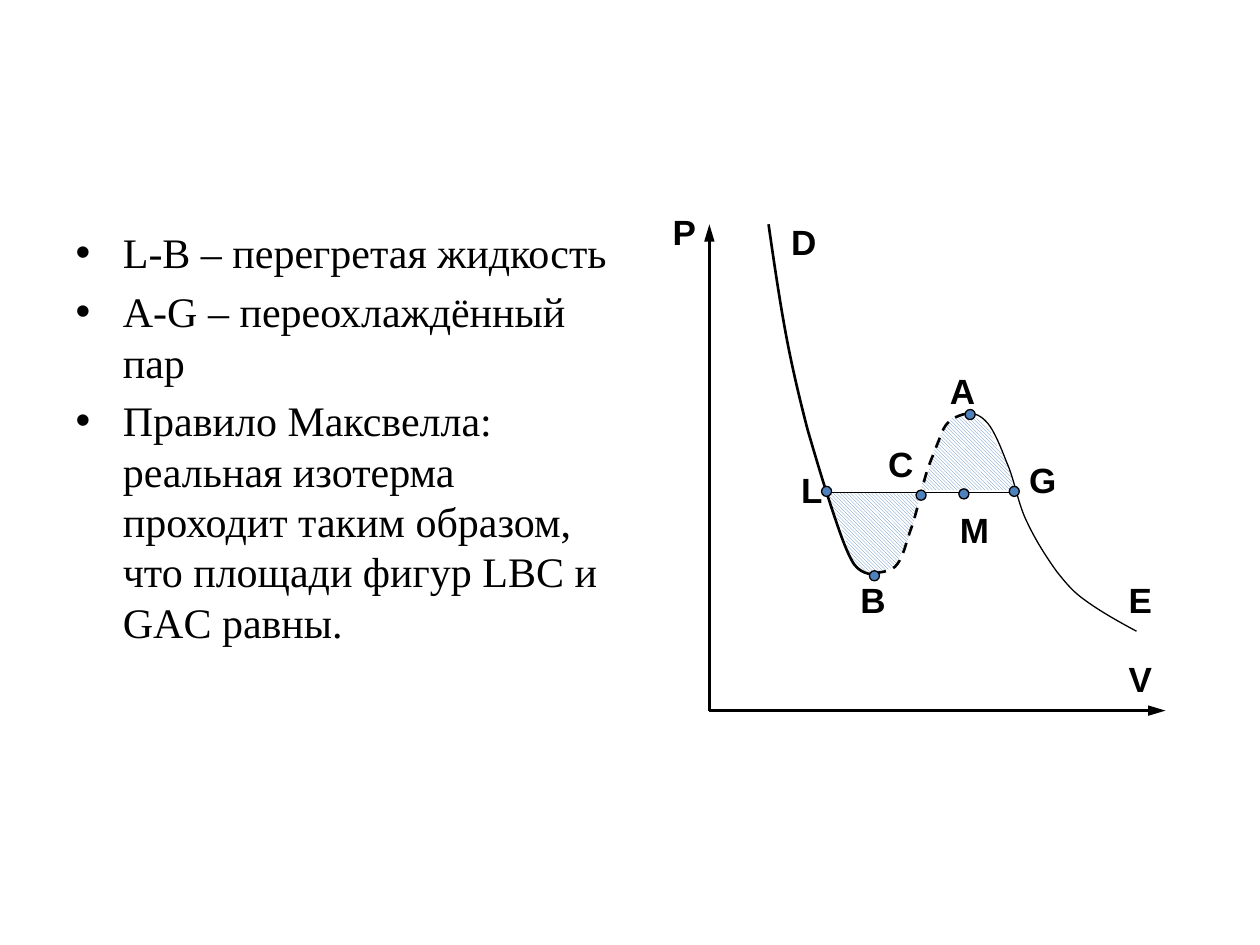
from dataclasses import dataclass

from lxml import etree
from pptx import Presentation, util as u
from pptx.dml.color import RGBColor
from pptx.enum import dml, shapes, text
from pptx.oxml import parse_xml
from pptx.oxml.ns import nsdecls, qn

Point = tuple[float, float]

# Grid: 100 columns by 75 rows of square cells
CELL = u.Inches(0.1)
COLORS = {"ink": "000000", "accent": "4F81BD", "paper": "FFFFFF"}
THICK, THIN = 1.5, 0.75
DOT = 0.8
LABEL_HEIGHT = 4.3
ISOBAR_ROW = 39.1


@dataclass
class Label:
    letter: str
    col: float
    row: float
    width: float = 4


@dataclass
class Branch:
    """Part of the isotherm: a chain of cubic Bezier knots and handles."""
    knots: list[Point]
    weight: float
    dashed: bool = False


NOTES = [
    "L-B – перегретая жидкость",
    "A-G – переохлаждённый пар",
    "Правило Максвелла: реальная изотерма проходит таким образом, "
    "что площади фигур LBC и GAC равны.",
]

LOBE_GAC = [
    (73.1, 38.9), (73.4, 37.1), (73, 39), (73.5, 37.7),
    (73.8, 37.2), (74, 36.4), (74.1, 35.9), (74.2, 35.6), (74.2, 35.3), (74.3, 35.1),
    (74.5, 34.7), (74.7, 34.5), (74.9, 34.1), (74.9, 34.1), (75.5, 33.2), (75.5, 33.2),
    (75.9, 33.1), (76.5, 32.9), (76.5, 32.9), (76.8, 33), (77.2, 33.1), (77.5, 33.2),
    (77.7, 33.3), (77.9, 33.3), (78, 33.4), (78.1, 33.5), (78.1, 33.7), (78.2, 33.9),
    (78.3, 34), (78.5, 34), (78.6, 34.1), (78.8, 34.9), (79, 35.3), (79.5, 35.9),
    (79.7, 36.4), (80, 37.1), (80.2, 37.7), (80.3, 38.1), (80.5, 38.9), (80.5, 38.9)]
LOBE_LBC = [
    (65.7, 39.1), (66, 40.5), (66.4, 40.9), (66.9, 42.2),
    (67.3, 43.1), (67.2, 44.2), (68, 44.9), (68.2, 45.1), (68.5, 45.2), (68.8, 45.4),
    (69.3, 45.3), (69.9, 45.4), (70.5, 45.2), (71, 45.1), (71.3, 44.4), (71.5, 44),
    (72.1, 43), (72.3, 42.2), (72.6, 41.2), (72.7, 40.9), (72.9, 39.8), (72.9, 39.2)]

BRANCHES = [
    # D to B: liquid
    Branch([(61, 17.8), (61.2, 19.2), (61.8, 23.4), (62.3, 26.1),
            (62.8, 28.9), (63.5, 31.8), (64.1, 34.1),
            (64.8, 36.5), (65.4, 38.5), (66, 40.3),
            (66.6, 42.1), (67.2, 43.9), (67.8, 44.8),
            (68.5, 45.7), (69.3, 45.5), (69.7, 45.7)], THICK),
    # B to A: unstable
    Branch([(69.5, 45.5), (69.8, 45.4), (70.8, 45.4), (71.2, 44.8),
            (71.7, 44.2), (71.9, 43.1), (72.3, 42),
            (72.7, 40.9), (73.1, 39.1), (73.4, 38),
            (73.7, 36.9), (74, 36.3), (74.3, 35.5),
            (74.6, 34.8), (74.8, 34), (75.2, 33.6),
            (75.6, 33.1), (76.4, 32.9), (76.8, 32.8)], THICK, True),
    # A to E: vapour
    Branch([(76.8, 32.8), (77.3, 32.8), (77.8, 32.9), (78.4, 33.6),
            (78.9, 34.2), (79.4, 35.4), (79.9, 36.7),
            (80.5, 38), (80.8, 40), (81.5, 41.4),
            (82.2, 42.9), (83.1, 44.3), (83.9, 45.4),
            (84.7, 46.4), (85.2, 47), (86.2, 47.7),
            (87.3, 48.5), (88.7, 49.3), (90.2, 50.1)], THIN),
]

LABELS = [
    Label("P", 52.4, 16.2, 3.9), Label("V", 88.6, 51.7, 3.9), Label("D", 61.8, 17),
    Label("L", 62.6, 36.7, 3.7), Label("B", 67.3, 45.4), Label("C", 69.5, 34.6),
    Label("A", 74.4, 28.8), Label("G", 80.7, 35.9, 4.2),
    Label("E", 88.6, 45.4, 3.9), Label("M", 75.2, 39.9, 4.3),
]

# Centres of the dots C, L, B, A, G, M
DOTS = [(73.1, 39.3), (65.6, 39), (69.4, 45.7), (77, 32.9), (80.5, 39), (76.5, 39.2)]


def cells(*lengths: float) -> list[int]:
    return [round(length * CELL) for length in lengths]


def color(name: str) -> RGBColor:
    return RGBColor.from_string(COLORS[name])


def add_curve(group, knots: list[Point]):
    """Freeform whose segments, three by three, become cubic Bezier curves."""
    start, *rest = [cells(*knot) for knot in knots]
    builder = group.shapes.build_freeform(*start)
    builder.add_line_segments(rest, close=False)
    curve = builder.convert_to_shape()
    curve.shadow.inherit = False
    segments = list(curve._element.iter(qn("a:lnTo")))
    outline = segments[0].getparent()
    for i in range(0, len(segments), 3):
        bezier = etree.SubElement(outline, qn("a:cubicBezTo"))
        for segment in segments[i:i + 3]:
            bezier.append(segment[0])
            outline.remove(segment)
    return curve


def set_line(line, weight: float) -> None:
    line.color.rgb = color("ink")
    line.width = u.Pt(weight)


def add_lobe(group, knots: list[Point]) -> None:
    lobe = add_curve(group, knots)
    lobe.line.fill.background()
    lobe.fill.patterned()
    lobe.fill.pattern = dml.MSO_PATTERN.LIGHT_DOWNWARD_DIAGONAL
    lobe.fill.fore_color.rgb = color("accent")
    lobe.fill.back_color.rgb = color("paper")


def add_branch(group, branch: Branch) -> None:
    curve = add_curve(group, branch.knots)
    curve.fill.background()
    set_line(curve.line, branch.weight)
    if branch.dashed:
        curve.line.dash_style = dml.MSO_LINE.DASH


def add_straight(group, start: Point, end: Point, weight: float, arrow: bool = False) -> None:
    straight = group.shapes.add_connector(shapes.MSO_CONNECTOR.STRAIGHT, *cells(*start, *end))
    set_line(straight.line, weight)
    if arrow:
        straight.line._get_or_add_ln().append(
            parse_xml(f'<a:tailEnd {nsdecls("a")} type="triangle" len="lg"/>'))
    straight._element.spPr.append(parse_xml(f'<a:effectLst {nsdecls("a")}/>'))


def add_label(group, label: Label) -> None:
    box = group.shapes.add_textbox(*cells(label.col, label.row, label.width, LABEL_HEIGHT))
    frame = box.text_frame
    frame.word_wrap = False
    frame.auto_size = text.MSO_AUTO_SIZE.SHAPE_TO_FIT_TEXT
    frame.text = label.letter
    font = frame.paragraphs[0].font
    font.name, font.size, font.bold = "Arial", u.Pt(20), True
    font.color.rgb = color("ink")


def add_dot(group, center: Point) -> None:
    left, top = (coordinate - DOT / 2 for coordinate in center)
    dot = group.shapes.add_shape(shapes.MSO_SHAPE.FLOWCHART_CONNECTOR,
                                 *cells(left, top, DOT, DOT))
    dot.shadow.inherit = False
    dot.fill.solid()
    dot.fill.fore_color.rgb = color("accent")
    set_line(dot.line, THIN)


def add_notes(slide) -> None:
    body = slide.placeholders[1]
    body.left, body.top, body.width, body.height = cells(5, 17.5, 44.2, 49.5)
    frame = body.text_frame
    frame.text = "\n".join(NOTES)
    for paragraph in frame.paragraphs:
        paragraph.font.name, paragraph.font.size = "Times New Roman", u.Pt(24)
        paragraph.font.color.rgb = color("ink")


def main() -> None:
    deck = Presentation()
    deck.slide_width, deck.slide_height = cells(100, 75)
    slide = deck.slides.add_slide(deck.slide_layouts[1])
    title = slide.shapes.title._element
    title.getparent().remove(title)
    add_notes(slide)

    # Diagram: equal areas, axes, isotherm, isobar, letters and dots
    diagram = slide.shapes.add_group_shape()
    for lobe in (LOBE_GAC, LOBE_LBC):
        add_lobe(diagram, lobe)
    origin = (56.3, 56.4)
    for axis_end in ((92.5, origin[1]), (origin[0], 17.8)):
        add_straight(diagram, origin, axis_end, THICK, arrow=True)
    for branch in BRANCHES:
        add_branch(diagram, branch)
    add_straight(diagram, (65.7, ISOBAR_ROW), (80.7, ISOBAR_ROW), THIN)
    for label in LABELS:
        add_label(diagram, label)
    for center in DOTS:
        add_dot(diagram, center)

    deck.save("out.pptx")


if __name__ == "__main__":
    main()
